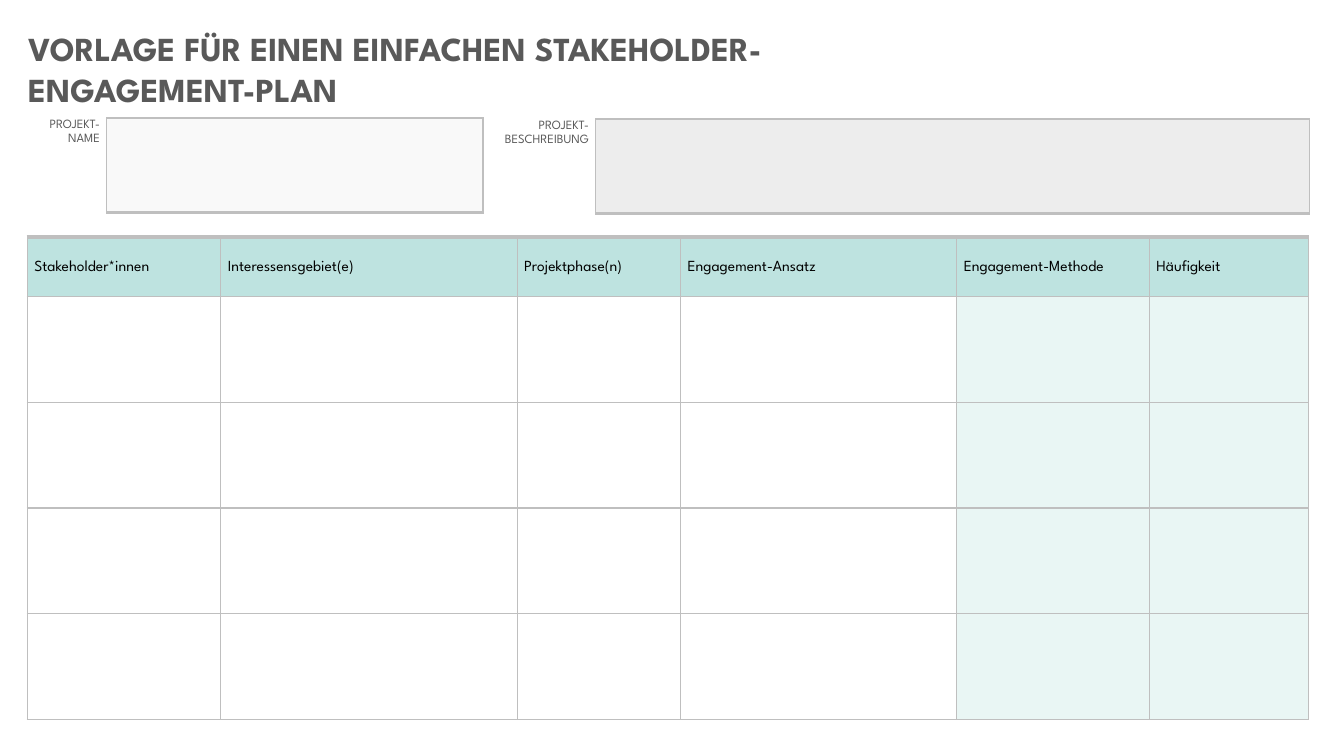
import pptx
import pptx.dml.color
import pptx.enum.text
import pptx.oxml
import pptx.oxml.ns
import pptx.util

FONT = "League Spartan"
GREY, RULE = "595959", "BFBFBF"
ALIGN = pptx.enum.text.PP_ALIGN
ANCHOR = pptx.enum.text.MSO_ANCHOR
inches = pptx.util.Inches

HEADINGS = ["Stakeholder*innen", "Interessensgebiet(e)", "Projektphase(n)",
            "Engagement-Ansatz", "Engagement-Methode", "Häufigkeit"]
COLUMN_WIDTHS = [1.92, 2.94, 1.62, 2.74, 1.91, 1.58]
ENTRY_ROWS = 4


def color(hex_code):
    return pptx.dml.color.RGBColor.from_string(hex_code)


def style_font(paragraph, size, hex_code, bold=False):
    font = paragraph.font
    font.name, font.size, font.bold = FONT, pptx.util.Pt(size), bold
    font.color.rgb = color(hex_code)


def style_cell(cell, fill, borders):
    """Give a cell its borders (side -> points, 0 for none), then its fill."""
    properties = cell._tc.get_or_add_tcPr()
    for side in "LRTB":
        points = borders.get(side, 0)
        paint = (f'<a:solidFill><a:srgbClr val="{RULE}"/></a:solidFill>'
                 if points else "<a:noFill/>")
        properties.append(pptx.oxml.parse_xml(
            f'<a:ln{side} {pptx.oxml.ns.nsdecls("a")} w="{int(points * 12700)}">'
            f'{paint}</a:ln{side}>'))
    if fill:
        cell.fill.solid()
        cell.fill.fore_color.rgb = color(fill)
    else:
        cell.fill.background()
    cell.margin_left = cell.margin_right = inches(0.07)
    cell.margin_top = cell.margin_bottom = 0


def write_cell(cell, text, size, hex_code, align=ALIGN.LEFT):
    paragraph = cell.text_frame.paragraphs[0]
    paragraph.text = text
    paragraph.alignment = align
    paragraph.line_spacing = 1.15
    style_font(paragraph, size, hex_code)


def add_grid(slide, left, top, widths, heights):
    """Add a plain table with the given column widths and row heights."""
    grid = slide.shapes.add_table(
        len(heights), len(widths), inches(left), inches(top),
        inches(sum(widths)), inches(sum(heights))).table
    grid.first_row = grid.horz_banding = False
    for column, width in zip(grid.columns, widths):
        column.width = inches(width)
    for row, height in zip(grid.rows, heights):
        row.height = inches(height)
    return grid


def add_title(slide, left, top, width, height):
    title = slide.shapes.title
    title.left, title.top = inches(left), inches(top)
    title.width, title.height = inches(width), inches(height)
    frame = title.text_frame
    frame.text = "VORLAGE FÜR EINEN EINFACHEN STAKEHOLDER-ENGAGEMENT-PLAN"
    frame.word_wrap = True
    frame.auto_size = pptx.enum.text.MSO_AUTO_SIZE.SHAPE_TO_FIT_TEXT
    frame.vertical_anchor = ANCHOR.TOP
    frame.paragraphs[0].alignment = ALIGN.LEFT
    style_font(frame.paragraphs[0], 24, GREY, bold=True)


def add_project_field(slide, left, top, widths, height, label, fill):
    """A right-aligned label beside an empty box to fill in."""
    grid = add_grid(slide, left, top, widths, [height])
    label_cell, entry_cell = grid.cell(0, 0), grid.cell(0, 1)
    style_cell(label_cell, None, {"R": 1})
    write_cell(label_cell, label, 9, GREY, ALIGN.RIGHT)
    style_cell(entry_cell, fill, {"L": 1, "R": 1, "T": 1, "B": 2.25})


def add_engagement_table(slide, left, top, header_height, row_height):
    grid = add_grid(slide, left, top, COLUMN_WIDTHS,
                    [header_height] + [row_height] * ENTRY_ROWS)
    thin = dict.fromkeys("LRTB", 1)
    for column, heading in enumerate(HEADINGS):
        # Heading
        header = grid.cell(0, column)
        style_cell(header, "BEE3E0", {**thin, "T": 3})
        header.vertical_anchor = ANCHOR.MIDDLE
        write_cell(header, heading, 11, "000000")
        # Empty entries, the last two columns tinted
        for row in range(1, ENTRY_ROWS + 1):
            style_cell(grid.cell(row, column),
                       "FFFFFF" if column < 4 else "E9F6F4", thin)


def main():
    deck = pptx.Presentation()
    deck.slide_width, deck.slide_height = inches(13.33), inches(7.5)
    slide = deck.slides.add_slide(deck.slide_layouts[5])
    add_title(slide, 0.18, 0.23, 8.88, 0.91)
    add_project_field(slide, 0.18, 1.17, [0.88, 3.73], 0.94,
                      "PROJEKT-\vNAME", "F9F9F9")
    add_project_field(slide, 4.79, 1.18, [1.12, 7.08], 0.94,
                      "PROJEKT-\vBESCHREIBUNG", "EDEDED")
    add_engagement_table(slide, 0.27, 2.35, 0.59, 1.05)
    deck.save("out.pptx")


if __name__ == "__main__":
    main()
